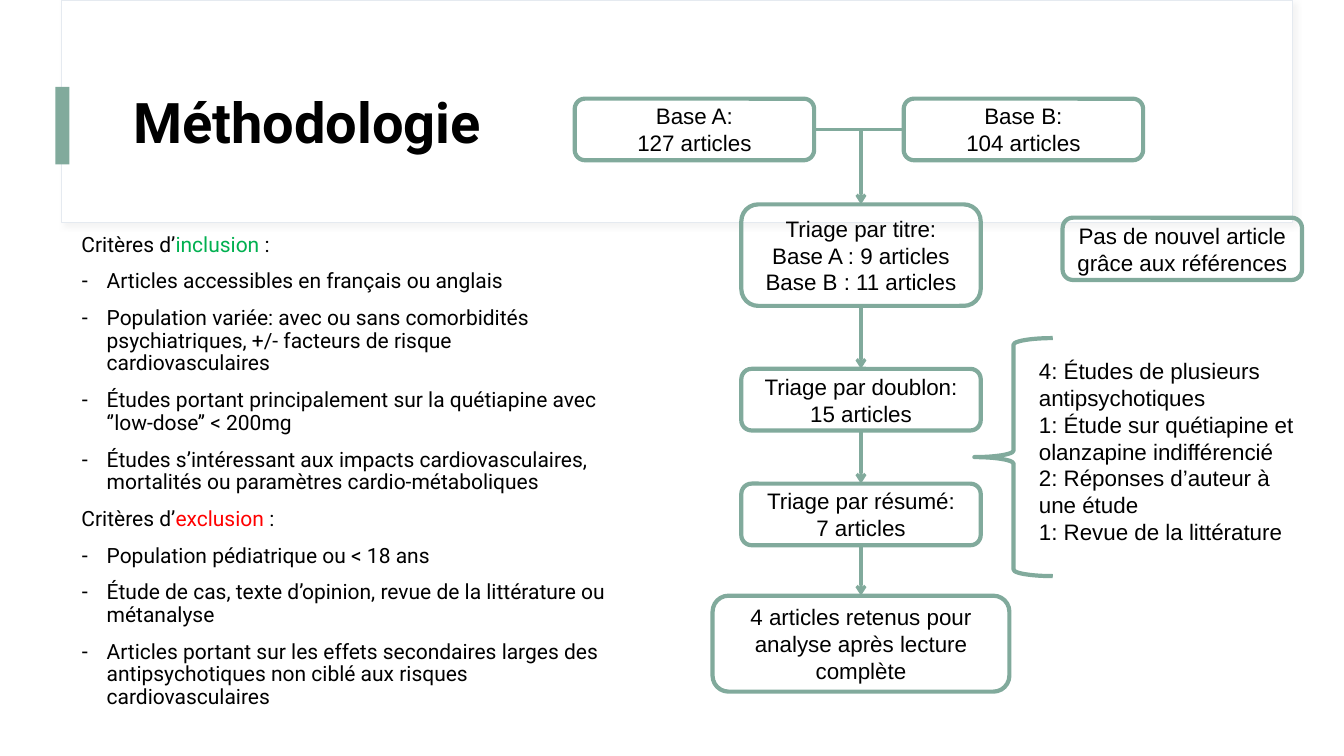
import pptx
import pptx.util
import pptx.oxml
import pptx.dml.color
import pptx.enum.shapes
import pptx.enum.text

Pt = pptx.util.Pt
MSO = pptx.enum.shapes.MSO_SHAPE
ALIGN = pptx.enum.text.PP_ALIGN
ANCHOR = pptx.enum.text.MSO_ANCHOR
AUTOSIZE = pptx.enum.text.MSO_AUTO_SIZE

COLORS = {"white": "FFFFFF", "black": "000000", "sage": "81AA9C", "border": "E5EAF0",
          "shadow": "D9D9D9", "green": "00B050", "red": "FF0000"}
NS = 'xmlns:a="http://schemas.openxmlformats.org/drawingml/2006/main"'

TITLE_FONT = {"name": "Roboto", "size": Pt(40), "bold": True}
LIST_FONT = {"name": "Roboto", "size": Pt(15)}
BOX_FONT = {"name": "Arial", "size": Pt(16)}
TITLE_PARA = {"alignment": ALIGN.LEFT, "line_spacing": 0.9}
LIST_PARA = {"alignment": ALIGN.LEFT, "line_spacing": 0.9,
             "space_before": Pt(10), "space_after": Pt(0)}

CRITERIA = [
    ("inclusion", "green", [
        "Articles accessibles en français ou anglais",
        "Population variée: avec ou sans comorbidités psychiatriques, "
        "+/- facteurs de risque cardiovasculaires",
        "Études portant principalement sur la quétiapine avec ‘’low-dose’’ < 200mg",
        "Études s’intéressant aux impacts cardiovasculaires, "
        "mortalités ou paramètres cardio-métaboliques"]),
    ("exclusion", "red", [
        "Population pédiatrique ou < 18 ans",
        "Étude de cas, texte d’opinion, revue de la littérature ou métanalyse",
        "Articles portant sur les effets secondaires larges des "
        "antipsychotiques non ciblé aux risques cardiovasculaires"]),
]
SOURCES = [["Base A:", "127 articles"], ["Base B:", "104 articles"]]
# Each step: top within the flow chart, width, height, lines
STEPS = [
    (75.5, 171, 72.5, ["Triage par titre:", "Base A : 9 articles", "Base B : 11 articles"]),
    (193, 171, 44, ["Triage par doublon: 15 articles"]),
    (275, 171, 44, ["Triage par résumé:", "7 articles"]),
    (355, 212, 68.5, ["4 articles retenus pour analyse après lecture complète"]),
]
EXCLUDED = ["4: Études de plusieurs antipsychotiques",
            "1: Étude sur quétiapine et olanzapine indifférencié",
            "2: Réponses d’auteur à une étude",
            "1: Revue de la littérature"]


def rgb(key):
    return pptx.dml.color.RGBColor.from_string(COLORS[key])


def apply(obj, values):
    for name, value in values.items():
        setattr(obj, name, value)


def place(sp, x, y, w, h):
    apply(sp, {"left": Pt(x), "top": Pt(y), "width": Pt(w), "height": Pt(h)})


def add_run(p, text, font, color="black"):
    r = p.add_run()
    r.text = text
    apply(r.font, font)
    r.font.color.rgb = rgb(color)


def add_lines(tf, lines, align):
    tf.word_wrap = True
    for i, line in enumerate(lines):
        p = tf.add_paragraph() if i else tf.paragraphs[0]
        p.alignment = align
        add_run(p, line, BOX_FONT)


def add_shape(slide, kind, x, y, w, h, fill=None, line=None, weight=3.0):
    sp = slide.shapes.add_shape(kind, Pt(x), Pt(y), Pt(w), Pt(h))
    sp.shadow.inherit = False
    if fill:
        sp.fill.solid()
        sp.fill.fore_color.rgb = rgb(fill)
    else:
        sp.fill.background()
    if line:
        sp.line.color.rgb = rgb(line)
        sp.line.width = Pt(weight)
    else:
        sp.line.fill.background()
    return sp


def add_box(slide, x, y, w, h, lines):
    sp = add_shape(slide, MSO.ROUNDED_RECTANGLE, x, y, w, h, line="sage")
    sp.text_frame.vertical_anchor = ANCHOR.MIDDLE
    add_lines(sp.text_frame, lines, ALIGN.CENTER)


def add_line(slide, x1, y1, x2, y2, arrow=True):
    sp = slide.shapes.add_connector(pptx.enum.shapes.MSO_CONNECTOR.STRAIGHT,
                                    Pt(x1), Pt(y1), Pt(x2), Pt(y2))
    sp.line.color.rgb = rgb("sage")
    sp.line.width = Pt(2.25)
    if arrow:
        sp.line._get_or_add_ln().append(pptx.oxml.parse_xml(f'<a:tailEnd {NS} type="arrow"/>'))
    sp._element.spPr.append(pptx.oxml.parse_xml(f"<a:effectLst {NS}/>"))


def header(slide, x, y, w, h):
    # Framed band with a soft shadow, and the accent bar
    band = add_shape(slide, MSO.RECTANGLE, x, y, w, h, "white", "border", 0.75)
    effects = band._element.spPr.find(pptx.oxml.ns.qn("a:effectLst"))
    effects.append(pptx.oxml.parse_xml(
        f'<a:outerShdw {NS} blurRad="{Pt(4)}" dist="{Pt(3)}" dir="2700000">'
        f'<a:srgbClr val="{COLORS["shadow"]}"><a:alpha val="30000"/></a:srgbClr></a:outerShdw>'))
    add_shape(slide, MSO.RECTANGLE, x - 4.5, y + 62, 10, 55.5, "sage")
    # Title, brought in front of the band
    sp = slide.shapes.title
    place(sp, x + 44, y + 43, 800, 93)
    tf = sp.text_frame
    apply(tf, {"vertical_anchor": ANCHOR.MIDDLE, "auto_size": AUTOSIZE.NONE})
    apply(tf.paragraphs[0], TITLE_PARA)
    add_run(tf.paragraphs[0], "Méthodologie", TITLE_FONT)
    slide.shapes._spTree.append(sp._element)


def list_paragraph(tf, first, bullet):
    p = tf.paragraphs[0] if first else tf.add_paragraph()
    apply(p, LIST_PARA)
    pPr = p._p.get_or_add_pPr()
    indent = Pt(18) if bullet else 0
    pPr.set("marL", str(indent))
    pPr.set("indent", str(-indent))
    mark = f'<a:buChar {NS} char="-"/>' if bullet else f"<a:buNone {NS}/>"
    pPr.append(pptx.oxml.parse_xml(mark))
    return p


def criteria(slide, x, y, w, h):
    sp = slide.placeholders[1]
    place(sp, x, y, w, h)
    tf = sp.text_frame
    apply(tf, {"auto_size": AUTOSIZE.NONE, "vertical_anchor": ANCHOR.TOP})
    for i, (word, color, items) in enumerate(CRITERIA):
        p = list_paragraph(tf, i == 0, False)
        for text, shade in (("Critères d’", "black"), (word + " ", color), (":", "black")):
            add_run(p, text, LIST_FONT, shade)
        for item in items:
            add_run(list_paragraph(tf, False, True), item, LIST_FONT)
    slide.shapes._spTree.append(sp._element)


def flow_chart(slide, x, y, w):
    # The two sources, joined by a bar
    box_w, box_h = 171, 44
    for left, lines in zip((x, x + w - box_w), SOURCES):
        add_box(slide, left, y, box_w, box_h, lines)
    mid, bottom = x + w / 2 + 1.5, y + box_h / 2
    add_line(slide, x + box_w, bottom, x + w - box_w, bottom, arrow=False)
    # Screening steps, each reached by an arrow
    for top, step_w, step_h, lines in STEPS:
        add_line(slide, mid, bottom, mid, y + top)
        add_box(slide, mid - step_w / 2, y + top, step_w, step_h, lines)
        bottom = y + top + step_h


def side_notes(slide, x, y, w):
    add_box(slide, x + 63, y, 171, 44.5, ["Pas de nouvel article grâce aux références"])
    add_shape(slide, MSO.LEFT_BRACE, x, y + 86, 56, 170, line="sage")
    sp = slide.shapes.add_textbox(Pt(x + 39), Pt(y + 96), Pt(w - 39), Pt(167))
    add_lines(sp.text_frame, EXCLUDED, ALIGN.LEFT)


def main():
    prs = pptx.Presentation()
    apply(prs, {"slide_width": Pt(960), "slide_height": Pt(540)})
    slide = prs.slides.add_slide(prs.slide_layouts[1])
    header(slide, 44, 0, 879, 159)
    criteria(slide, 51, 163.5, 394.5, 355)
    flow_chart(slide, 410.5, 70.5, 406)
    side_notes(slide, 696, 155.5, 244)
    prs.save("out.pptx")


if __name__ == "__main__":
    main()
